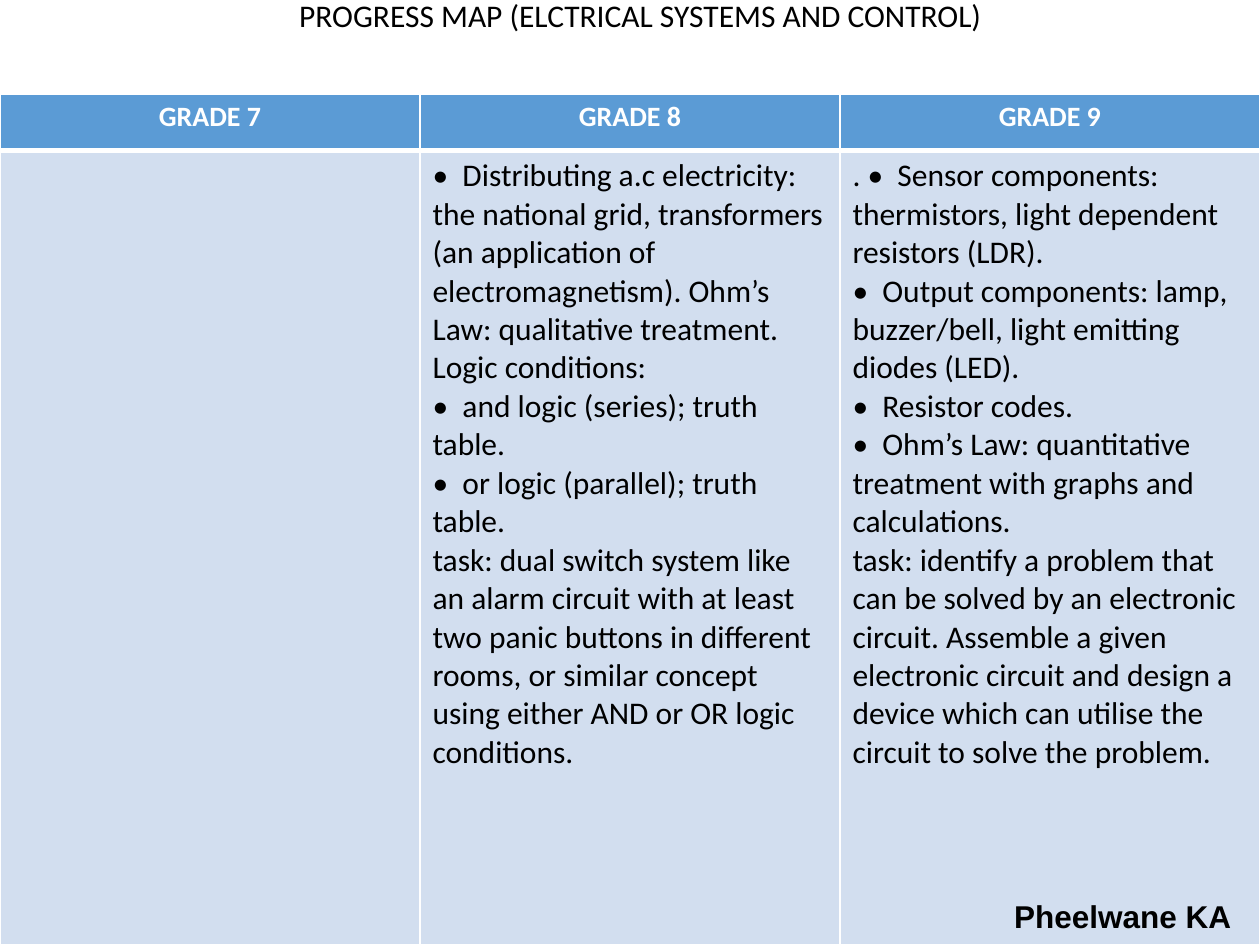
from lxml import etree
from pptx import Presentation
from pptx.dml.color import RGBColor
from pptx.enum.text import MSO_ANCHOR, PP_ALIGN
from pptx.oxml.ns import qn
from pptx.util import Pt

LEFT, CENTER = PP_ALIGN.LEFT, PP_ALIGN.CENTER
TOP = MSO_ANCHOR.TOP
WHITE, BLACK, BLUE, PALE = "FFFFFF", "000000", "5B9BD5", "D2DEEF"
WIDTH, HEIGHT = 720, 540

GRADES = {
    "GRADE 7": [],
    "GRADE 8": [
        "•  Distributing a.c electricity: the national grid, transformers (an application of "
        "electromagnetism). Ohm’s Law: qualitative treatment.",
        "Logic conditions:",
        "•  and logic (series); truth table.",
        "•  or logic (parallel); truth table.",
        "task: dual switch system like an alarm circuit with at least two panic buttons in "
        "different rooms, or similar concept using either AND or OR logic conditions.",
    ],
    "GRADE 9": [
        ". •  Sensor components: thermistors, light dependent resistors (LDR).",
        "•  Output components: lamp, buzzer/bell, light emitting diodes (LED).",
        "•  Resistor codes.",
        "•  Ohm’s Law: quantitative treatment with graphs and calculations.",
        "task: identify a problem that can be solved by an electronic circuit. Assemble a given "
        "electronic circuit and design a device which can utilise the circuit to solve the problem.",
    ],
}


def color(value):
    return RGBColor.from_string(value)


def apply(target, values):
    for name, value in values.items():
        setattr(target, name, value)


class SlideBuilder:
    body = {"name": "Calibri", "size": Pt(18), "bold": False}
    header = {**body, "size": Pt(16), "bold": True}
    signature = {**body, "name": "Arial", "bold": True}

    def __init__(self, slide):
        self.slide = slide

    def paragraphs(self, frame, lines, font, ink=BLACK, align=LEFT, spacing=1.0):
        for index, line in enumerate(lines):
            para = frame.add_paragraph() if index else frame.paragraphs[0]
            apply(para, {"alignment": align, "line_spacing": spacing})
            span = para.add_run()
            span.text = line
            apply(span.font, font)
            span.font.color.rgb = color(ink)

    def text(self, place, line, font, margins, **layout):
        box = self.slide.shapes.add_textbox(*map(Pt, place))
        frame = box.text_frame
        apply(frame, {"word_wrap": True, "vertical_anchor": TOP, **margins})
        self.paragraphs(frame, [line], font, **layout)

    def border(self, cell, bottom):
        properties = cell._tc.get_or_add_tcPr()
        widths = {"a:lnL": 1, "a:lnR": 1, "a:lnT": 1, "a:lnB": bottom}
        for position, (tag, width) in enumerate(widths.items()):
            line = etree.Element(qn(tag), w=str(Pt(width)))
            fill = etree.SubElement(line, qn("a:solidFill"))
            etree.SubElement(fill, qn("a:srgbClr"), val=WHITE)
            properties.insert(position, line)

    def cell(self, cell, lines, font, fill, bottom, **layout):
        cell.fill.solid()
        cell.fill.fore_color.rgb = color(fill)
        self.border(cell, bottom)
        self.paragraphs(cell.text_frame, lines, font, **layout)

    def table(self, place, heights, columns):
        shape = self.slide.shapes.add_table(2, len(columns), *map(Pt, place))
        table = shape.table
        for row, height in zip(table.rows, heights):
            row.height = Pt(height)
        insets = {"margin_left": Pt(5), "margin_right": Pt(5),
                  "margin_top": Pt(0), "margin_bottom": Pt(0)}
        for index, (heading, lines) in enumerate(columns.items()):
            table.columns[index].width = Pt(place[2] / len(columns))
            top = table.cell(0, index)
            apply(top, insets)
            self.cell(top, [heading], self.header, BLUE, 3,
                      ink=WHITE, align=CENTER, spacing=1.15)
            self.cell(table.cell(1, index), lines, self.body, PALE, 1)


def main():
    deck = Presentation()
    apply(deck, {"slide_width": Pt(WIDTH), "slide_height": Pt(HEIGHT)})
    page = SlideBuilder(deck.slides.add_slide(deck.slide_layouts[6]))
    page.text((60, 0, 612, 20), "PROGRESS MAP (ELCTRICAL SYSTEMS AND CONTROL)", page.body,
              {"margin_top": Pt(0), "margin_bottom": Pt(0)}, align=CENTER, spacing=0.9)
    page.table((0, 54, WIDTH, 486), (32, 454), GRADES)
    page.text((572.4, 509, 147.6, 29), "Pheelwane KA", page.signature, {})
    deck.save("out.pptx")


if __name__ == "__main__":
    main()
